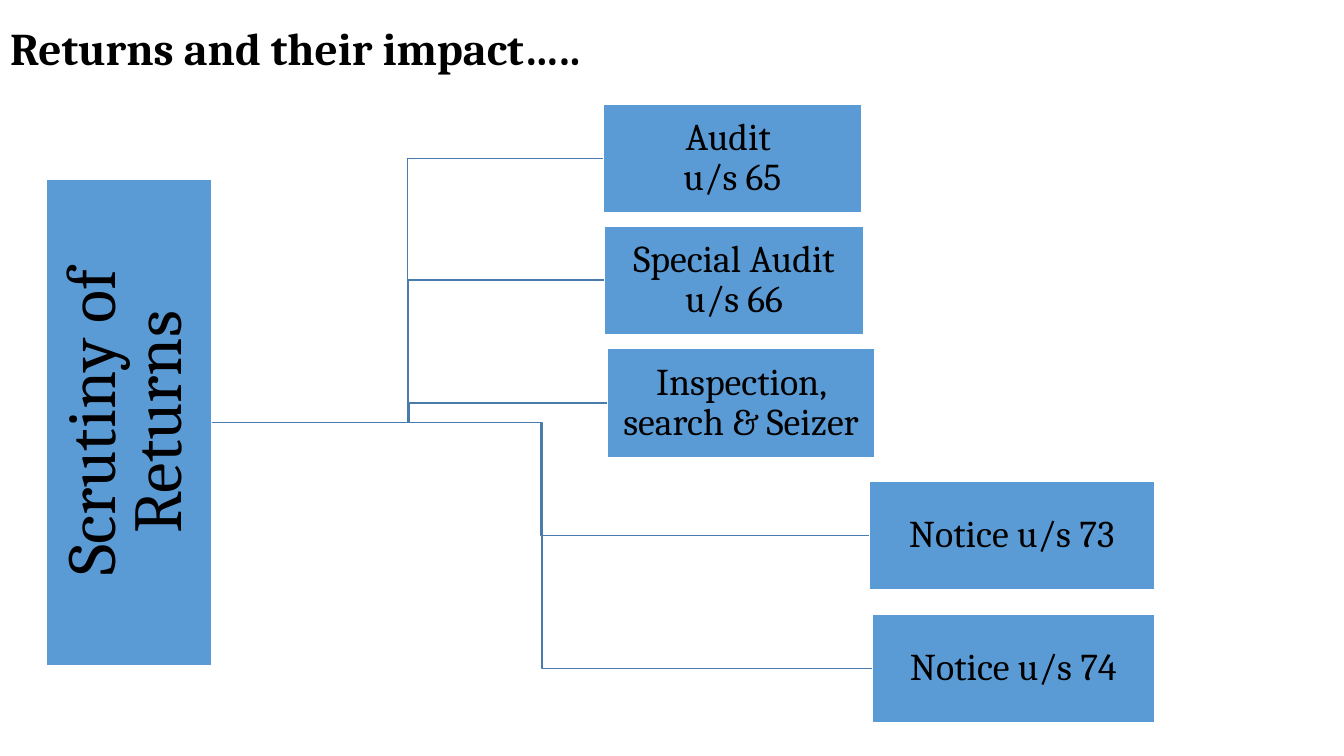
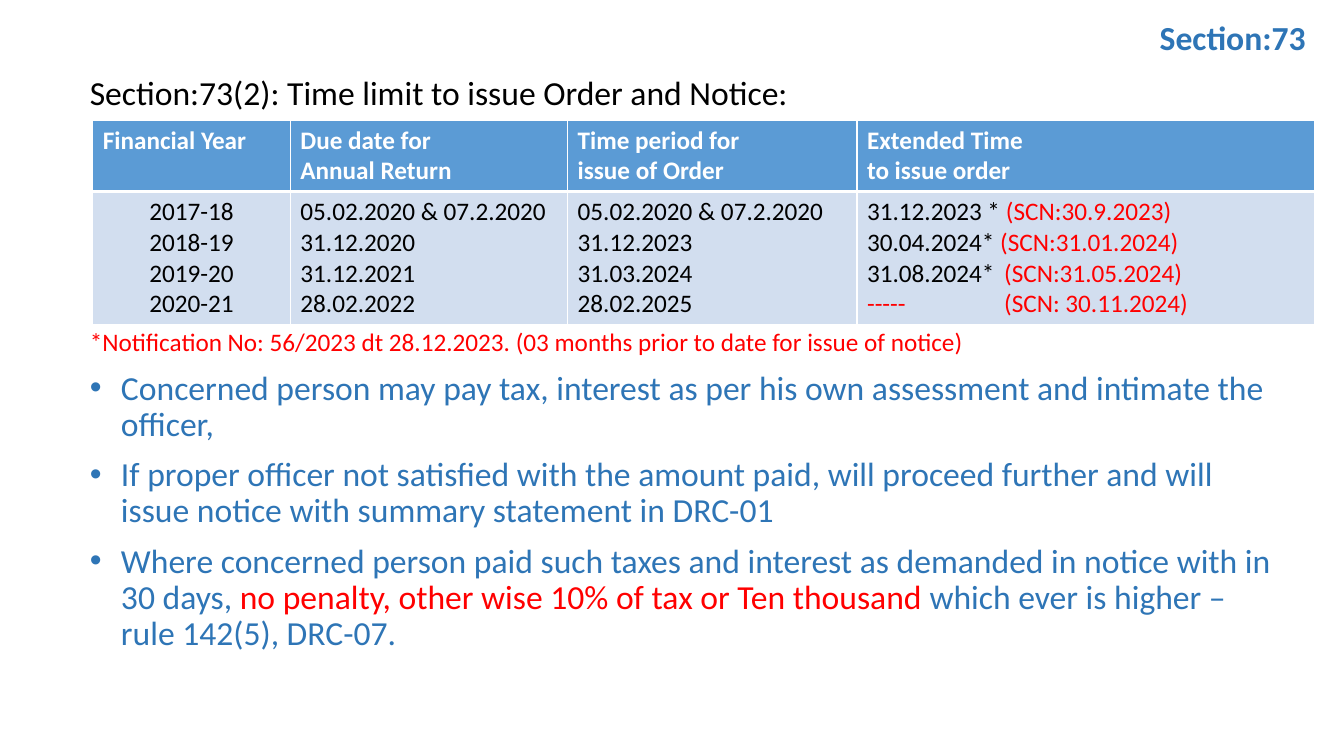
from lxml import etree
from pptx import Presentation
from pptx import util as u
from pptx.dml.color import RGBColor
from pptx.enum import shapes, text
from pptx.oxml import ns

In, Pt = u.Inches, u.Pt
LEFT, CENTER, RIGHT = text.PP_ALIGN.LEFT, text.PP_ALIGN.CENTER, text.PP_ALIGN.RIGHT

COLORS = {
    "black": "000000", "white": "FFFFFF", "red": "FF0000", "heading": "2E75B6",
    "box": "5B9BD5", "link": "497CAB", "row": "D2DEEF",
}


def rgb(name):
    return RGBColor.from_string(COLORS[name])


def add_xml(parent, tag, **attrs):
    return etree.SubElement(parent, ns.qn(tag), attrs)


class Deck:
    """Holds the style and the current slide."""
    serif, sans = "Cambria", "Calibri"
    spacing = 0.9

    def __init__(self):
        self.prs = Presentation()
        self.prs.slide_width, self.prs.slide_height = In(13.33), In(7.5)
        self.slide = None

    def new_slide(self, layout):
        self.slide = self.prs.slides.add_slide(self.prs.slide_layouts[layout])

    def place(self, sp, at):
        sp.left, sp.top, sp.width, sp.height = (In(v) for v in at)

    def add_runs(self, p, runs, size, font, color="black", bold=False, align=LEFT):
        """Fill a paragraph; a run is a string or a (string, colour) pair."""
        p.alignment = align
        for run in [runs] if isinstance(runs, str) else runs:
            words, shade = (run, color) if isinstance(run, str) else run
            r = p.add_run()
            r.text = words
            r.font.size, r.font.name, r.font.bold = Pt(size), font, bold
            r.font.color.rgb = rgb(shade)

    def paragraphs(self, tf, count):
        return [tf.paragraphs[0]] + [tf.add_paragraph() for _ in range(count - 1)]

    def title(self, words, at, size, font, color="black", align=LEFT):
        sp = self.slide.shapes.title
        self.place(sp, at)
        tf = sp.text_frame
        tf.auto_size, tf.word_wrap = text.MSO_AUTO_SIZE.NONE, True
        tf.vertical_anchor = text.MSO_ANCHOR.BOTTOM
        p = tf.paragraphs[0]
        p.line_spacing = self.spacing
        self.add_runs(p, words, size, font, color, True, align)

    def body(self, items, at):
        """Items are (runs, size, colour, space before, bulleted)."""
        sp = self.slide.placeholders[1]
        self.place(sp, at)
        tf = sp.text_frame
        tf.auto_size, tf.word_wrap = text.MSO_AUTO_SIZE.NONE, True
        for p, item in zip(self.paragraphs(tf, len(items)), items):
            runs, size, color, before, bulleted = item
            p.line_spacing, p.space_before = self.spacing, Pt(before)
            self.add_runs(p, runs, size, self.sans, color)
            pPr = p._p.get_or_add_pPr()
            indent = In(0.31) if bulleted else 0
            pPr.set("marL", str(indent))
            pPr.set("indent", str(-indent))
            if bulleted:
                add_xml(pPr, "a:buFont", typeface="Arial")
                add_xml(pPr, "a:buChar", char="•")
            else:
                add_xml(pPr, "a:buNone")

    def box(self, lines, at, size=27, spacing=spacing, vertical=False):
        sp = self.slide.shapes.add_shape(
            shapes.MSO_SHAPE.RECTANGLE, *(In(v) for v in at))
        sp.shadow.inherit = False
        sp.fill.solid()
        sp.fill.fore_color.rgb = rgb("box")
        sp.line.color.rgb, sp.line.width = rgb("white"), Pt(1)
        tf = sp.text_frame
        tf.word_wrap, tf.vertical_anchor = True, text.MSO_ANCHOR.MIDDLE
        tf.margin_left = tf.margin_right = tf.margin_top = tf.margin_bottom = In(0.02)
        if vertical:
            sp.element.txBody.bodyPr.set("vert", "vert270")
        for p, line in zip(self.paragraphs(tf, len(lines)), lines):
            p.line_spacing = spacing
            self.add_runs(p, line, size, self.serif, align=CENTER)
        return sp

    def link(self, start, end):
        """Elbow line from the right side of start to the left side of end."""
        cx = self.slide.shapes.add_connector(shapes.MSO_CONNECTOR.ELBOW, 0, 0, 0, 0)
        cx.begin_connect(start, 3)
        cx.end_connect(end, 1)
        cx.line.color.rgb, cx.line.width = rgb("link"), Pt(1)
        add_xml(cx._element.spPr, "a:effectLst")

    def table(self, rows, at, widths, heights):
        """Each cell is a list of lines; the first row is the header."""
        shape = self.slide.shapes.add_table(
            len(rows), len(widths), In(at[0]), In(at[1]),
            In(sum(widths)), In(sum(heights)))
        table = shape.table
        table.horz_banding = False
        for col, width in zip(table.columns, widths):
            col.width = In(width)
        for i, row in enumerate(rows):
            table.rows[i].height = In(heights[i])
            for j, lines in enumerate(row):
                self.cell(table.cell(i, j), lines, i == 0,
                          CENTER if i and j == 0 else LEFT)

    def cell(self, cell, lines, header, align):
        cell.fill.solid()
        cell.fill.fore_color.rgb = rgb("box" if header else "row")
        for p, line in zip(self.paragraphs(cell.text_frame, len(lines)), lines):
            self.add_runs(p, line, 18, self.sans, "white" if header else "black",
                          header, align)
            if any("\t" in part for run in line for part in run):
                tabs = add_xml(p._p.get_or_add_pPr(), "a:tabLst")
                add_xml(tabs, "a:tab", pos=str(In(1.36)), algn="l")
        # Borders come before the fill
        tcPr = cell._tc.get_or_add_tcPr()
        for k, side in enumerate("LRTB"):
            width = 3 if header and side == "B" else 1
            ln = add_xml(tcPr, "a:ln" + side, w=str(Pt(width)))
            add_xml(add_xml(ln, "a:solidFill"), "a:srgbClr", val=COLORS["white"])
            tcPr.insert(k, ln)


def returns_slide(d):
    d.new_slide(5)
    d.title("Returns and their impact…..", (0, 0.11, 6.49, 0.69), 32.4, d.serif)

    # Tree: one root, five outcomes
    root = d.box(["Scrutiny of Returns"], (0.46, 1.78, 1.64, 4.82), 49, 0.8, True)
    outcomes = [
        (["Audit ", "u/s 65"], 5.98, 1.03, 2.57),
        (["Special Audit u/s 66"], 5.99, 2.24, 2.58),
        (["Inspection, search & Seizer"], 6.02, 3.46, 2.66),
        (["Notice u/s 73"], 8.62, 4.77, 2.83),
        (["Notice u/s 74"], 8.65, 6.09, 2.8),
    ]
    for lines, left, top, width in outcomes:
        d.link(root, d.box(lines, (left, top, width, 1.08)))


def section_slide(d):
    d.new_slide(1)
    d.title("Section:73", (10.13, 0.23, 2.92, 0.39), 24, d.sans, "heading", RIGHT)

    # Text above and below the table
    d.body([
        ("Section:73(2): Time limit to issue Order and Notice:", 24, "black", 10, False),
        ("*Notification No: 56/2023 dt 28.12.2023. (03 months prior to date for "
         "issue of notice)", 18, "red", 155, False),
        ("Concerned person may pay tax, interest as per his own assessment and "
         "intimate the officer,", 24, "heading", 10, True),
        ("If proper officer not satisfied with the amount paid, will proceed further "
         "and will issue notice with summary statement in DRC-01",
         24, "heading", 10, True),
        (["Where concerned person paid such taxes and interest as demanded in notice "
          "with in 30 days, ",
          ("no penalty, other wise 10% of tax or Ten thousand ", "red"),
          "which ever is higher – rule 142(5), DRC-07."], 24, "heading", 10, True),
    ], (0.79, 0.71, 12.01, 6.67))

    # Time limits
    d.table([
        [["Financial Year"], ["Due date for", "Annual Return"],
         ["Time period for", "issue of Order"], ["Extended Time", "to issue order"]],
        [["2017-18", "2018-19", "2019-20", "2020-21"],
         ["05.02.2020 & 07.2.2020", "31.12.2020", "31.12.2021", "28.02.2022"],
         ["05.02.2020 & 07.2.2020", "31.12.2023", "31.03.2024", "28.02.2025"],
         [["31.12.2023 * ", ("(SCN:30.9.2023)", "red")],
          ["30.04.2024* ", ("(SCN:31.01.2024)", "red")],
          ["31.08.2024*\t", ("(SCN:31.05.2024)", "red")],
          [("-----\t(SCN: 30.11.2024)", "red")]]],
    ], (0.92, 1.19), (1.96, 2.75, 2.87, 4.54), (0.7, 1.32))


def main():
    d = Deck()
    returns_slide(d)
    section_slide(d)
    d.prs.save("out.pptx")


if __name__ == "__main__":
    main()
